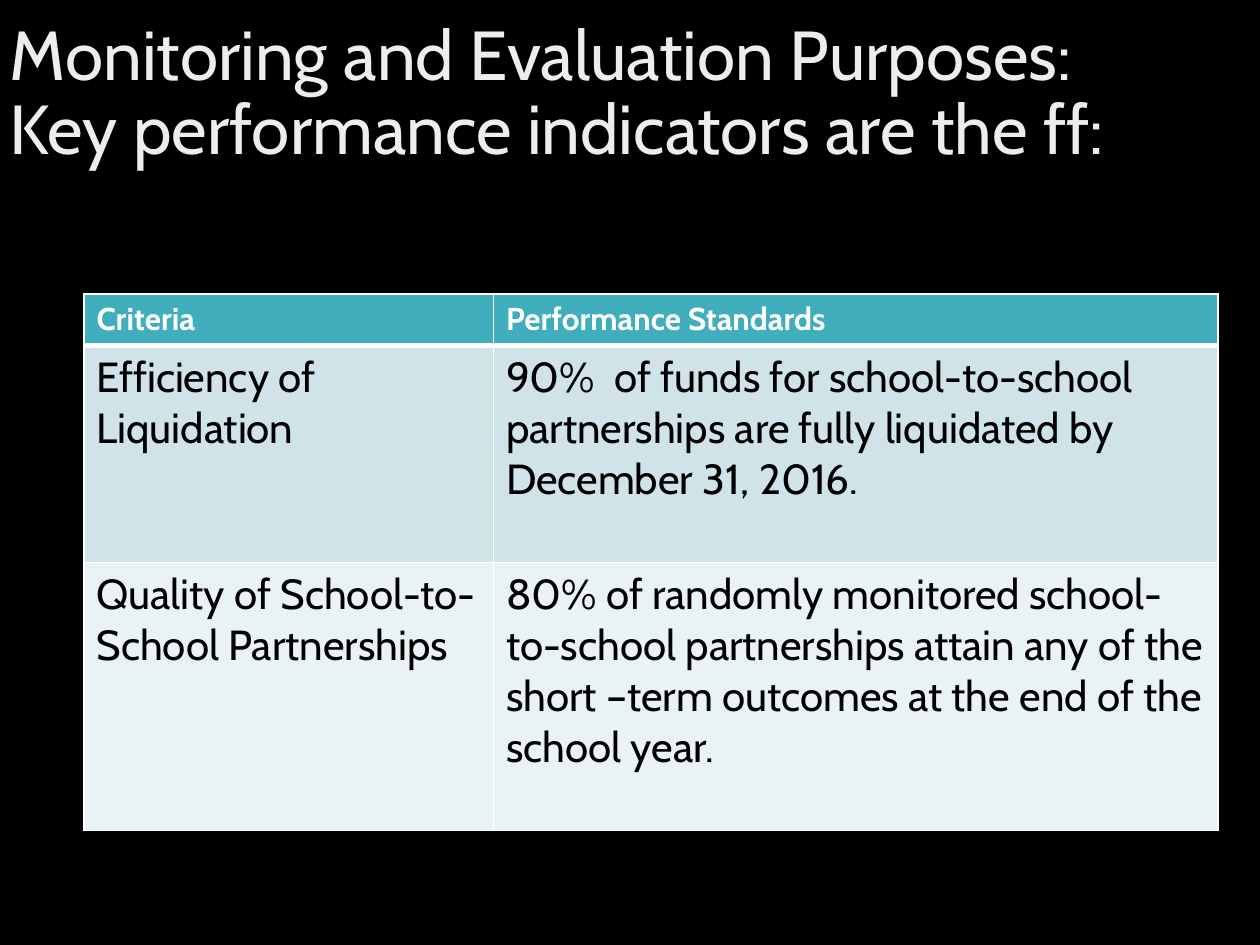
import copy

import pptx
import pptx.dml.color
import pptx.enum.text
import pptx.oxml.ns
import pptx.util
from lxml import etree

Pt = pptx.util.Pt
qn = pptx.oxml.ns.qn


def color(hex_code):
    return pptx.dml.color.RGBColor.from_string(hex_code)


def write_text(frame, text, size, hex_code, bold=False, font="Cabin", line_spacing=None):
    paragraph = frame.paragraphs[0]
    paragraph.text = text
    paragraph.alignment = pptx.enum.text.PP_ALIGN.LEFT
    if line_spacing:
        paragraph.line_spacing = line_spacing
    for run in paragraph.runs:
        run.font.name = font
        run.font.size = Pt(size)
        run.font.bold = bold
        run.font.color.rgb = color(hex_code)
    for line_break in paragraph._p.findall(qn("a:br")):
        line_break.append(copy.deepcopy(paragraph.runs[0]._r.rPr))


class Deck:
    background = "000000"
    title_color = "EDEDED"
    border_color = "FFFFFF"
    header_fill = "41AEBD"
    band_fills = ("CFE3E8", "E9F2F4")

    def __init__(self, width, height):
        self.presentation = pptx.Presentation()
        self.presentation.slide_width = Pt(width)
        self.presentation.slide_height = Pt(height)
        self.slide = None

    def add_slide(self):
        self.slide = self.presentation.slides.add_slide(self.presentation.slide_layouts[5])
        fill = self.slide.background.fill
        fill.solid()
        fill.fore_color.rgb = color(self.background)

    def add_title(self, text, left, top, width, height):
        title = self.slide.shapes.title
        title.left, title.top, title.width, title.height = map(Pt, (left, top, width, height))
        frame = title.text_frame
        frame.word_wrap = True
        frame.auto_size = pptx.enum.text.MSO_AUTO_SIZE.NONE
        frame.vertical_anchor = pptx.enum.text.MSO_ANCHOR.MIDDLE
        write_text(frame, text, 39.6, self.title_color, line_spacing=0.9)

    def add_border(self, cell, side, width):
        properties = cell._tc.get_or_add_tcPr()
        line = etree.SubElement(properties, qn(f"a:ln{side}"), w=str(Pt(width)))
        fill = etree.SubElement(line, qn("a:solidFill"))
        etree.SubElement(fill, qn("a:srgbClr"), val=self.border_color)

    def format_cell(self, cell, text, row):
        is_header = row == 0
        borders = {"L": 1, "R": 1, "T": 3 if row == 1 else 1, "B": 3 if is_header else 1}
        for side, width in borders.items():
            self.add_border(cell, side, width)
        cell.fill.solid()
        cell.fill.fore_color.rgb = color(
            self.header_fill if is_header else self.band_fills[(row - 1) % 2])
        if is_header:
            write_text(cell.text_frame, text, 18, "FFFFFF", bold=True)
        else:
            write_text(cell.text_frame, text, 24, "000000")

    def add_table(self, rows, left, top, column_widths, row_heights):
        table = self.slide.shapes.add_table(
            len(rows), len(column_widths), Pt(left), Pt(top),
            Pt(sum(column_widths)), Pt(sum(row_heights))).table
        for column, width in zip(table.columns, column_widths):
            column.width = Pt(width)
        for row, height in zip(table.rows, row_heights):
            row.height = Pt(height)
        for row, texts in enumerate(rows):
            for column, text in enumerate(texts):
                self.format_cell(table.cell(row, column), text, row)

    def save(self):
        self.presentation.save("out.pptx")


def main():
    indicators = [
        ("Criteria", "Performance Standards"),
        ("Efficiency of Liquidation",
         "90%  of funds for school-to-school partnerships are fully liquidated by "
         "December 31, 2016."),
        ("Quality of School-to-School Partnerships",
         "80% of randomly monitored school-to-school partnerships attain any of the "
         "short –term outcomes at the end of the school year."),
    ]
    deck = Deck(720, 540)
    deck.add_slide()
    deck.add_title(
        "Monitoring and Evaluation Purposes: \vKey performance indicators are the ff:",
        -1.5, 2, 670, 104.5)
    deck.add_table(indicators, 48, 168, (234, 414), (29.5, 124, 153))
    deck.save()


if __name__ == "__main__":
    main()
